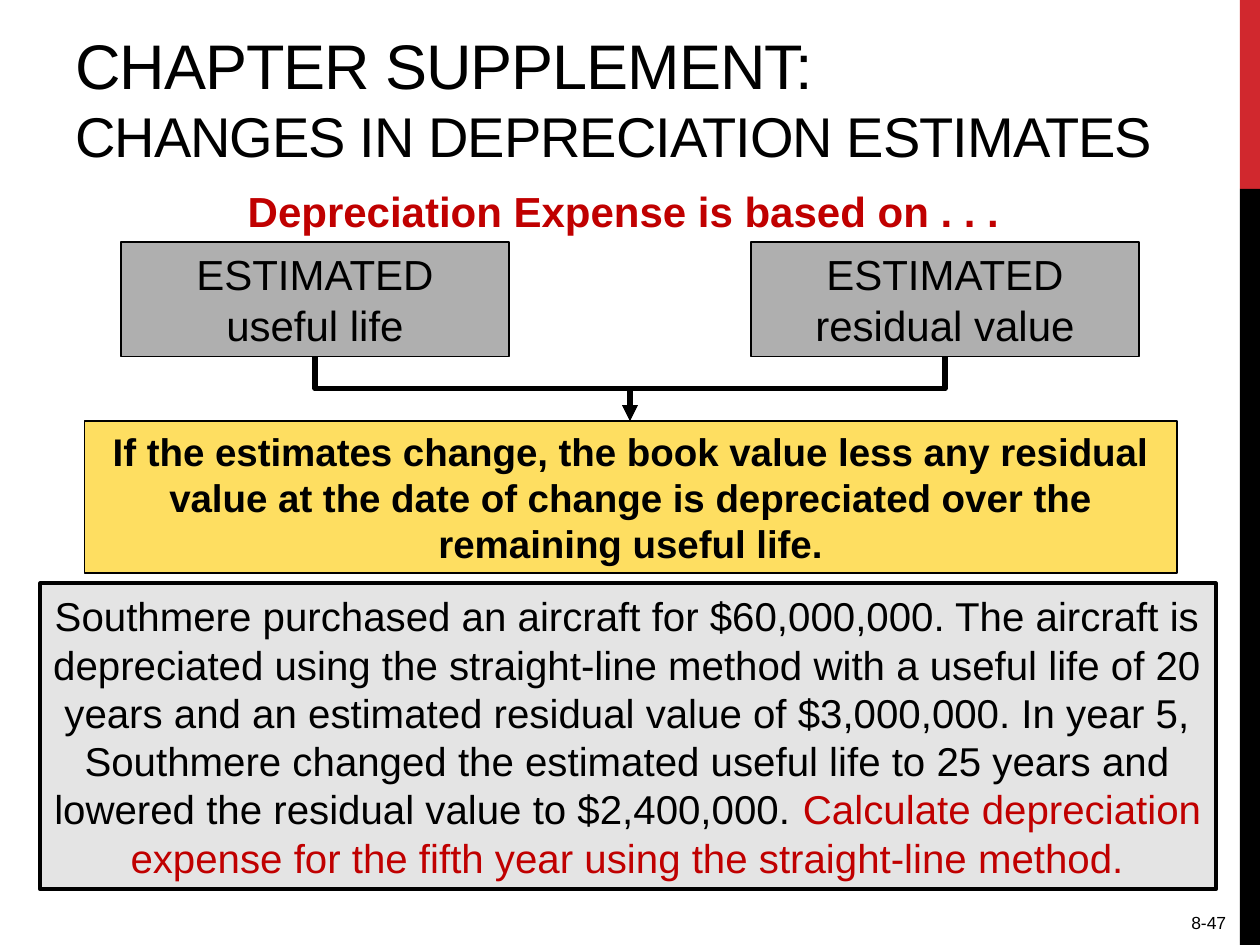
import pptx
import pptx.dml.color
import pptx.enum.shapes
import pptx.enum.text
import pptx.oxml
import pptx.oxml.ns
import pptx.util
from dataclasses import dataclass

Inches = pptx.util.Inches
ALIGN = pptx.enum.text.PP_ALIGN
ANCHOR = pptx.enum.text.MSO_ANCHOR


@dataclass(frozen=True)
class Theme:
    font: str = "Arial"
    ink: str = "000000"
    accent: str = "C00000"
    band: str = "D1282E"
    basis: str = "AFAFAF"
    rule: str = "FEDE61"
    problem: str = "E4E4E4"
    title_size: int = 36
    subtitle_size: int = 32
    basis_size: int = 24
    problem_size: int = 23
    rule_size: int = 22
    number_size: int = 10


THEME = Theme()


def rgb(color):
    return pptx.dml.color.RGBColor.from_string(color)


def write(paragraph, text, size, color=THEME.ink, bold=False, tracking=None):
    """Append text to the paragraph; each newline becomes a line break."""
    for index, line in enumerate(text.split("\n")):
        if index:
            paragraph.add_line_break()
        if not line:
            continue
        run = paragraph.add_run()
        run.text = line
        run.font.name = THEME.font
        run.font.size = pptx.util.Pt(size)
        run.font.bold = bold
        run.font.color.rgb = rgb(color)
        if tracking is not None:
            run.font._element.set("spc", str(round(tracking * 100)))


class SlideBuilder:
    def __init__(self, slide, theme):
        self.slide = slide
        self.theme = theme

    def _paragraph(self, shape, align, anchor):
        frame = shape.text_frame
        frame.word_wrap = True
        frame.vertical_anchor = anchor
        paragraph = frame.paragraphs[0]
        paragraph.alignment = align
        return paragraph

    def label(self, left, top, width, height, align=ALIGN.CENTER, anchor=ANCHOR.TOP):
        """Add a text box and return its paragraph."""
        box = self.slide.shapes.add_textbox(
            Inches(left), Inches(top), Inches(width), Inches(height))
        return self._paragraph(box, align, anchor)

    def panel(self, left, top, width, height, fill, border=None):
        """Add a filled rectangle and return its paragraph."""
        shape = self.slide.shapes.add_shape(
            pptx.enum.shapes.MSO_SHAPE.RECTANGLE,
            Inches(left), Inches(top), Inches(width), Inches(height))
        shape.shadow.inherit = False
        shape.fill.solid()
        shape.fill.fore_color.rgb = rgb(fill)
        if border:
            shape.line.color.rgb = rgb(self.theme.ink)
            shape.line.width = pptx.util.Pt(border)
        else:
            shape.line.fill.background()
        return self._paragraph(shape, ALIGN.CENTER, ANCHOR.MIDDLE)

    def drop_arrow(self, start_x, start_y, end_x, end_y):
        """Add an elbow arrow that leaves and arrives vertically."""
        center_x, center_y = (start_x + end_x) / 2, (start_y + end_y) / 2
        drop, run = end_y - start_y, abs(end_x - start_x)
        rightward = end_x > start_x
        # The elbow is horizontal first, so it is laid out turned and then rotated.
        side = drop / 2 if rightward else -drop / 2
        arrow = self.slide.shapes.add_connector(
            pptx.enum.shapes.MSO_CONNECTOR.ELBOW,
            Inches(center_x + side), Inches(center_y - run / 2),
            Inches(center_x - side), Inches(center_y + run / 2))
        arrow.line.color.rgb = rgb(self.theme.ink)
        arrow.line.width = pptx.util.Pt(3)
        properties = arrow._element.spPr
        degrees = 270 if rightward else 90
        properties.find(pptx.oxml.ns.qn("a:xfrm")).set("rot", str(degrees * 60000))
        namespace = pptx.oxml.ns.nsdecls("a")
        arrow.line._get_or_add_ln().append(
            pptx.oxml.parse_xml(f'<a:tailEnd {namespace} type="triangle"/>'))
        properties.append(pptx.oxml.parse_xml(f"<a:effectLst {namespace}/>"))


def main():
    presentation = pptx.Presentation()
    presentation.slide_width, presentation.slide_height = Inches(10), Inches(7.5)
    slide = presentation.slides.add_slide(presentation.slide_layouts[6])
    builder = SlideBuilder(slide, THEME)

    builder.panel(9.84, 0, 0.16, 1.5, THEME.band)
    builder.panel(9.84, 1.5, 0.16, 6, THEME.ink)

    basis_top, basis_width, basis_height, rule_top = 1.92, 3.08, 0.91, 3.34
    middle = 5
    bases = {2.5: "ESTIMATED\nuseful life", 7.5: "ESTIMATED residual value"}
    for center in bases:
        builder.drop_arrow(center, basis_top + basis_height, middle, rule_top)

    title = builder.label(0.5, -0.11, 9.17, 1.5, ALIGN.LEFT, ANCHOR.BOTTOM)
    write(title, "CHAPTER SUPPLEMENT:\n", THEME.title_size, tracking=-0.6)
    write(title, "CHANGES IN DEPRECIATION ESTIMATES", THEME.subtitle_size, tracking=-0.6)

    heading = builder.label(0.83, 1.42, 8.33, 0.51)
    write(heading, "Depreciation Expense is based on . . . ", THEME.basis_size,
          color=THEME.accent, bold=True)

    for center, text in bases.items():
        basis = builder.panel(center - basis_width / 2, basis_top,
                              basis_width, basis_height, THEME.basis, border=1)
        write(basis, text, THEME.basis_size)

    rule = builder.panel(0.67, rule_top, 8.67, 1.21, THEME.rule, border=1)
    write(rule, "If the estimates change, the book value less any residual value at the "
          "date of change is depreciated over the remaining useful life.",
          THEME.rule_size, bold=True)

    problem = builder.panel(0.32, 4.63, 9.33, 2.43, THEME.problem, border=2.25)
    write(problem, "Southmere purchased an aircraft for $60,000,000. The aircraft is "
          "depreciated using the straight-line method with a useful life of 20 years and "
          "an estimated residual value of $3,000,000. In year 5, Southmere changed the "
          "estimated useful life to 25 years and lowered the residual value to $2,400,000. ",
          THEME.problem_size)
    write(problem, "Calculate depreciation expense for the fifth year using the "
          "straight-line method.", THEME.problem_size, color=THEME.accent)

    write(builder.label(8, 7.19, 1.83, 0.31, ALIGN.RIGHT), "8-47", THEME.number_size)

    presentation.save("out.pptx")


if __name__ == "__main__":
    main()
